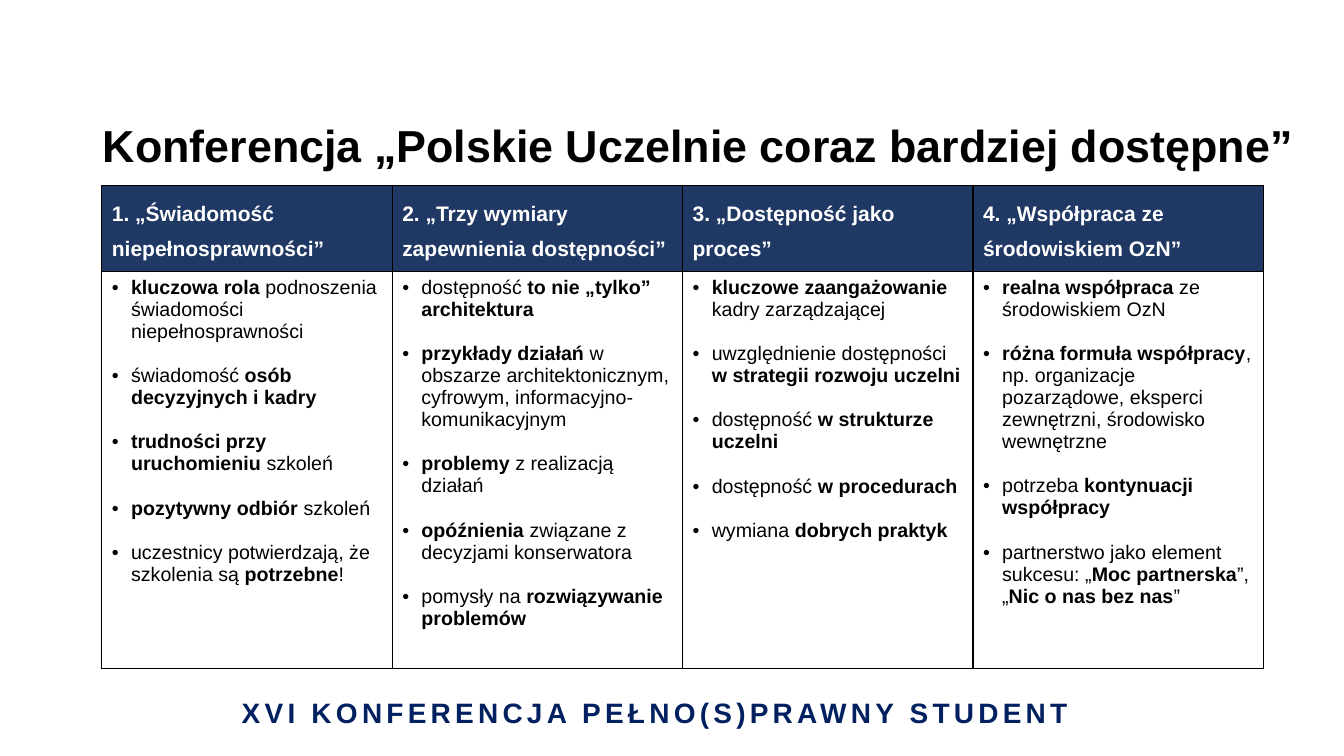
from lxml.etree import SubElement
from pptx import Presentation
from pptx.dml.color import RGBColor
from pptx.enum.text import MSO_ANCHOR, MSO_AUTO_SIZE, PP_ALIGN
from pptx.oxml.ns import qn
from pptx.util import Inches, Pt

TITLE = "Konferencja „Polskie Uczelnie coraz bardziej dostępne”"
FOOTER = "XVI KONFERENCJA PEŁNO(S)PRAWNY STUDENT"
BOLD_MARK = "**"
PANELS = [
    ("1. „Świadomość niepełnosprawności”", [
        "**kluczowa rola **podnoszenia świadomości niepełnosprawności",
        "świadomość **osób decyzyjnych i kadry**",
        "**trudności przy uruchomieniu **szkoleń",
        "**pozytywny odbiór **szkoleń",
        "uczestnicy potwierdzają, że szkolenia są **potrzebne**!",
    ]),
    ("2. „Trzy wymiary zapewnienia dostępności”", [
        "dostępność **to nie „tylko” architektura**",
        "**przykłady działań **w obszarze architektonicznym, cyfrowym, "
        "informacyjno-komunikacyjnym",
        "**problemy **z realizacją działań",
        "**opóźnienia** związane z decyzjami konserwatora",
        "pomysły na **rozwiązywanie problemów**",
    ]),
    ("3. „Dostępność jako proces”", [
        "**kluczowe zaangażowanie **kadry zarządzającej",
        "uwzględnienie dostępności **w strategii rozwoju uczelni**",
        "dostępność **w strukturze uczelni**",
        "dostępność **w procedurach**",
        "wymiana **dobrych praktyk**",
    ]),
    ("4. „Współpraca ze środowiskiem OzN”", [
        "**realna współpraca **ze środowiskiem OzN",
        "**różna formuła współpracy**, np. organizacje pozarządowe, "
        "eksperci zewnętrzni, środowisko wewnętrzne",
        "potrzeba** kontynuacji współpracy**",
        "partnerstwo jako element sukcesu: „**Moc partnerska**”, "
        "„**Nic o nas bez nas**”",
    ]),
]

FONT = "Arial"
BLACK = RGBColor(0x00, 0x00, 0x00)
WHITE = RGBColor(0xFF, 0xFF, 0xFF)
HEADER_BLUE = RGBColor(0x20, 0x38, 0x64)
FOOTER_BLUE = RGBColor(0x00, 0x20, 0x60)
COLUMN_WIDTH = Inches(2.88)
HEADER_HEIGHT = Inches(0.82)
BODY_HEIGHT = Inches(3.94)
INDENT = Inches(0.19)


def add_run(paragraph, text, size, color, bold=True):
    run = paragraph.add_run()
    run.text = text
    run.font.name = FONT
    run.font.size = Pt(size)
    run.font.bold = bold
    run.font.color.rgb = color
    return run


def style_cell(cell, color):
    properties = cell._tc.get_or_add_tcPr()
    for side in ("a:lnL", "a:lnR", "a:lnT", "a:lnB"):
        border = SubElement(properties, qn(side), w=str(Pt(1)))
        border_fill = SubElement(border, qn("a:solidFill"))
        SubElement(border_fill, qn("a:srgbClr"), val=str(BLACK))
    cell.fill.solid()
    cell.fill.fore_color.rgb = color


def add_bullets(frame, points):
    for index, point in enumerate(points):
        paragraph = frame.paragraphs[0] if index == 0 else frame.add_paragraph()
        properties = paragraph._p.get_or_add_pPr()
        properties.set("marL", str(INDENT))
        properties.set("indent", str(-INDENT))
        SubElement(properties, qn("a:buFont"), typeface=FONT)
        SubElement(properties, qn("a:buChar"), char="•")
        if index:
            paragraph.space_before = Pt(16)
        for part, text in enumerate(point.split(BOLD_MARK)):
            if text:
                add_run(paragraph, text, 14, BLACK, bold=part % 2 == 1)


def add_title(slide):
    title = slide.shapes.title
    title.left, title.top = Inches(0.92), Inches(0.74)
    title.width, title.height = Inches(12.05), Inches(1.45)
    frame = title.text_frame
    frame.word_wrap = True
    frame.auto_size = MSO_AUTO_SIZE.NONE
    frame.vertical_anchor = MSO_ANCHOR.MIDDLE
    paragraph = frame.paragraphs[0]
    paragraph.alignment = PP_ALIGN.LEFT
    paragraph.line_spacing = 0.9
    add_run(paragraph, TITLE, 32, BLACK)


def add_panels(slide):
    panels = slide.shapes.add_table(
        2, len(PANELS), Inches(1.01), Inches(1.84),
        COLUMN_WIDTH * len(PANELS), HEADER_HEIGHT + BODY_HEIGHT).table
    panels.horz_banding = False
    panels.rows[0].height = HEADER_HEIGHT
    panels.rows[1].height = BODY_HEIGHT
    for column, (heading, points) in enumerate(PANELS):
        panels.columns[column].width = COLUMN_WIDTH
        header, body = panels.cell(0, column), panels.cell(1, column)
        style_cell(header, HEADER_BLUE)
        style_cell(body, WHITE)
        paragraph = header.text_frame.paragraphs[0]
        paragraph.line_spacing = 1.5
        add_run(paragraph, heading, 15, WHITE)
        add_bullets(body.text_frame, points)


def add_footer(slide):
    footer = slide.shapes.add_textbox(
        Inches(2.28), Inches(6.85), Inches(8.43), Inches(0.44))
    footer.text_frame.word_wrap = True
    paragraph = footer.text_frame.paragraphs[0]
    paragraph.alignment = PP_ALIGN.CENTER
    run = add_run(paragraph, FOOTER, 20, FOOTER_BLUE)
    run.font._element.set("spc", "300")


def main():
    presentation = Presentation()
    presentation.slide_width = Inches(13.33)
    presentation.slide_height = Inches(7.5)
    slide = presentation.slides.add_slide(presentation.slide_layouts[5])
    add_footer(slide)
    add_title(slide)
    add_panels(slide)
    presentation.save("out.pptx")


if __name__ == "__main__":
    main()
